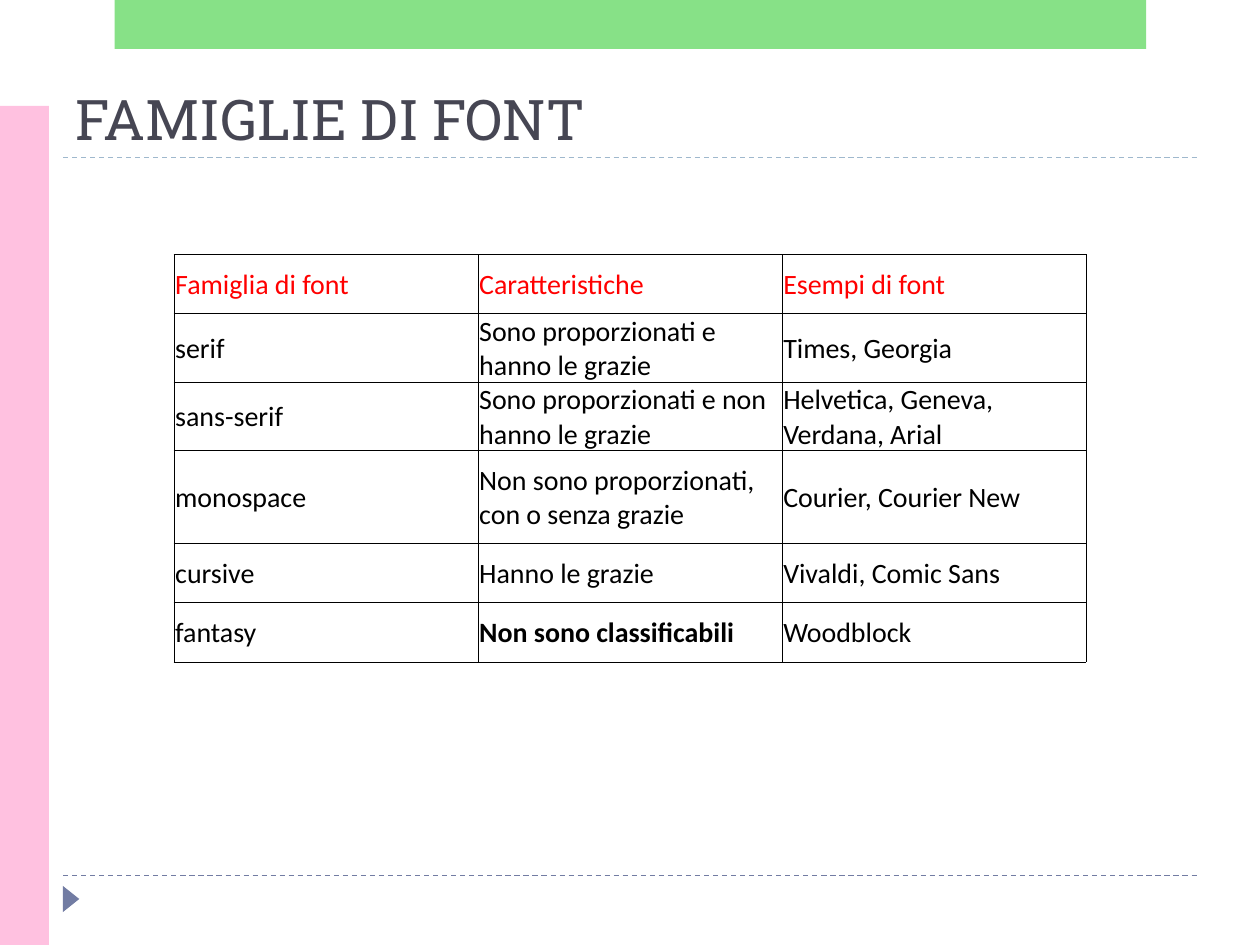
from dataclasses import dataclass

from lxml import etree
from pptx import Presentation
from pptx import util as u
from pptx.dml.color import RGBColor
from pptx.enum import dml, shapes, text
from pptx.oxml import ns


@dataclass(frozen=True)
class Theme:
    """Colours, fonts and type sizes of the slide."""
    title: str = "464653"
    header: str = "FF0000"
    body: str = "000000"
    slate: str = "727CA3"
    mist: str = "9FB8CD"
    pink: str = "FFC1E0"
    green: str = "62D862"
    title_font: str = "Roboto Slab"
    body_font: str = "Calibri"
    title_size: float = 32
    body_size: float = 16


THEME = Theme()
ROWS = [
    ("Famiglia di font", "Caratteristiche", "Esempi di font"),
    ("serif", "Sono proporzionati e hanno le grazie", "Times, Georgia"),
    ("sans-serif", "Sono proporzionati e non hanno le grazie",
     "Helvetica, Geneva, Verdana, Arial"),
    ("monospace", "Non sono proporzionati, con o senza grazie",
     "Courier, Courier New"),
    ("cursive", "Hanno le grazie", "Vivaldi, Comic Sans"),
    ("fantasy", "Non sono classificabili", "Woodblock"),
]
ROW_HEIGHTS = [33.8, 33.8, 33.8, 53.3, 33.8, 33.8]
COLUMN_WIDTH = 173.76
BOLD_TEXT = "Non sono classificabili"


def write(frame, words, *, font, size, color, bold=False):
    """Put one formatted run into the first paragraph of a text frame."""
    span = frame.paragraphs[0].add_run()
    span.text = words
    span.font.name = font
    span.font.size = u.Pt(size)
    span.font.bold = bold
    span.font.color.rgb = RGBColor.from_string(color)


def add_rule(page, y, color):
    """Draw a dashed horizontal rule between the page margins."""
    rule = page.shapes.add_connector(
        shapes.MSO_CONNECTOR.STRAIGHT, u.Pt(36), u.Pt(y), u.Pt(684), u.Pt(y))
    rule.line.color.rgb = RGBColor.from_string(color)
    rule.line.width = u.Pt(0.75)
    rule.line.dash_style = dml.MSO_LINE.DASH
    etree.SubElement(rule._element.spPr, ns.qn("a:effectLst"))


def add_block(page, kind, bounds, color, *, rotation=0, opacity=100):
    """Draw a filled preset shape without an outline."""
    block = page.shapes.add_shape(kind, *map(u.Pt, bounds))
    block.shadow.inherit = False
    block.rotation = rotation
    block.line.fill.background()
    block.fill.solid()
    block.fill.fore_color.rgb = RGBColor.from_string(color)
    if opacity < 100:
        tint = block._element.spPr.find(".//" + ns.qn("a:srgbClr"))
        etree.SubElement(tint, ns.qn("a:alpha"), val=str(opacity * 1000))


def add_title(page, words):
    """Add the slide title, resting on the upper rule."""
    box = page.shapes.add_textbox(u.Pt(36), u.Pt(39.6), u.Pt(648), u.Pt(50.4))
    frame = box.text_frame
    frame.word_wrap = True
    frame.vertical_anchor = text.MSO_ANCHOR.BOTTOM
    write(frame, words, font=THEME.title_font, size=THEME.title_size,
          color=THEME.title)


def add_borders(cell):
    """Give a cell thin solid borders on all four sides."""
    properties = cell._tc.get_or_add_tcPr()
    for index, side in enumerate(("lnL", "lnR", "lnT", "lnB")):
        border = etree.Element(ns.qn(f"a:{side}"), w=str(u.Pt(0.5)))
        fill = etree.SubElement(border, ns.qn("a:solidFill"))
        etree.SubElement(fill, ns.qn("a:srgbClr"), val=THEME.body)
        properties.insert(index, border)


def fill_cell(cell, words, *, color, bold):
    """Format one table cell and write its text."""
    cell.fill.background()
    cell.vertical_anchor = text.MSO_ANCHOR.MIDDLE
    cell.margin_left = cell.margin_right = cell.margin_top = u.Pt(0.72)
    cell.margin_bottom = u.Pt(0)
    add_borders(cell)
    write(cell.text_frame, words, font=THEME.body_font, size=THEME.body_size,
          color=color, bold=bold)


def add_font_table(page):
    """Add the table of font families."""
    columns = len(ROWS[0])
    table = page.shapes.add_table(
        len(ROWS), columns, u.Pt(99.4), u.Pt(145.4),
        u.Pt(COLUMN_WIDTH * columns), u.Pt(sum(ROW_HEIGHTS))).table
    table.first_row = table.horz_banding = False
    for column in table.columns:
        column.width = u.Pt(COLUMN_WIDTH)
    for r, (values, height) in enumerate(zip(ROWS, ROW_HEIGHTS)):
        table.rows[r].height = u.Pt(height)
        for c, words in enumerate(values):
            fill_cell(table.cell(r, c), words, bold=words == BOLD_TEXT,
                      color=THEME.body if r else THEME.header)


def main():
    """Build the slide and save the deck."""
    deck = Presentation()
    deck.slide_width, deck.slide_height = u.Pt(720), u.Pt(540)
    page = deck.slides.add_slide(deck.slide_layouts[6])
    kinds = shapes.MSO_SHAPE
    add_rule(page, 500.4, THEME.slate)
    add_rule(page, 90, THEME.mist)
    add_block(page, kinds.ISOSCELES_TRIANGLE, (33.1, 509, 15, 9.4),
              THEME.slate, rotation=90)
    add_block(page, kinds.RECTANGLE, (0, 60.5, 28, 479.5), THEME.pink)
    add_block(page, kinds.RECTANGLE, (65.5, 0, 589.5, 28), THEME.green,
              opacity=76)
    add_title(page, "FAMIGLIE DI FONT")
    add_font_table(page)
    deck.save("out.pptx")


if __name__ == "__main__":
    main()
